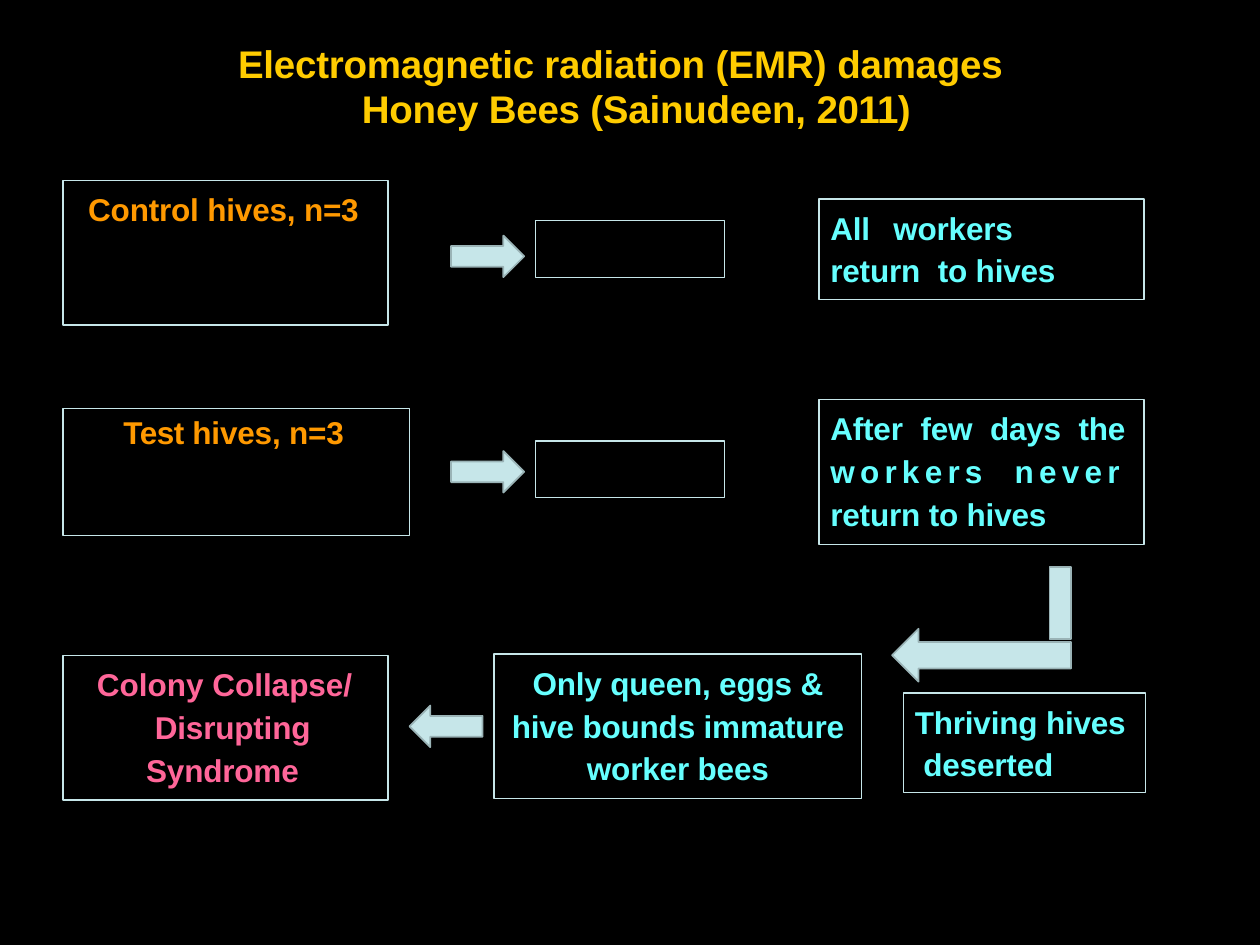
from lxml import etree
from pptx import Presentation
from pptx import util as u
from pptx.dml.color import RGBColor
from pptx.enum import shapes, text
from pptx.oxml.ns import qn

GOLD, ORANGE, CYAN, PINK = "FFCC00", "FF9900", "66FFFF", "FF6699"
PALE, GREY, BLACK = "C6E6E9", "9AB3B6", "000000"
SHAPE, ALIGN = shapes.MSO_SHAPE, text.PP_ALIGN


def rgb(value):
    """Return the colour for a hex string."""
    return RGBColor.from_string(value)


def add_shape(s, kind, at, fill=None, line=PALE, width=0.75):
    """Add a preset shape without a shadow."""
    sp = s.shapes.add_shape(kind, *map(u.Inches, at))
    sp.shadow.inherit = False
    if fill:
        sp.fill.solid()
        sp.fill.fore_color.rgb = rgb(fill)
    else:
        sp.fill.background()
    sp.line.color.rgb = rgb(line)
    sp.line.width = u.Pt(width)
    return sp


def add_arrow(s, kind, at):
    """Add a pale block arrow or arrow part."""
    return add_shape(s, kind, at, fill=PALE, line=GREY, width=1)


def write(sp, runs, color, size=18, top=0.04, right=0, left=0, hang=0,
          spacing=None, before=0, align=ALIGN.LEFT, tab=None):
    """Write one paragraph of (text, letter spacing) runs, with \\v as line break."""
    tf = sp.text_frame
    tf.word_wrap = True
    tf.vertical_anchor = text.MSO_ANCHOR.TOP
    tf.margin_left = tf.margin_bottom = 0
    tf.margin_top, tf.margin_right = u.Inches(top), u.Inches(right)
    p = tf.paragraphs[0]
    p.alignment, p.line_spacing, p.space_before = align, spacing, u.Pt(before)
    pPr = p._p.get_or_add_pPr()
    pPr.set("marL", str(u.Inches(left)))
    pPr.set("indent", str(u.Inches(hang)))
    if tab:
        tabs = etree.SubElement(pPr, qn("a:tabLst"))
        etree.SubElement(tabs, qn("a:tab"), pos=str(u.Inches(tab)), algn="l")
    for words, spc in runs:
        for i, part in enumerate(words.split("\v")):
            if i:
                p.add_line_break()
            r = p.add_run()
            r.text = part
            r.font.name, r.font.size, r.font.bold = "Arial", u.Pt(size), True
            r.font.color.rgb = rgb(color)
            r._r.get_or_add_rPr().set("spc", str(round(spc * 100)))


def add_box(s, at, runs, color, **fmt):
    """Add an outlined black box with text."""
    write(add_shape(s, SHAPE.RECTANGLE, at, fill=BLACK), runs, color, **fmt)


def main():
    """Build the slide."""
    prs = Presentation()
    prs.slide_width, prs.slide_height = u.Inches(10), u.Inches(7.5)
    s = prs.slides.add_slide(prs.slide_layouts[6])
    s.background.fill.solid()
    s.background.fill.fore_color.rgb = rgb(BLACK)

    title = s.shapes.add_textbox(*map(u.Inches, (1.88, 0.32, 6.5, 0.72)))
    write(title, [("Electromagnetic radiation ", -0.1), ("(EMR) ", 0),
                  ("damages\v Honey Bees (Sainudeen, ", -0.1), ("2011)", -0.3)],
          GOLD, size=22, top=0, left=0.91, hang=-0.9, spacing=u.Pt(26))

    add_box(s, (0.5, 1.43, 2.58, 1.15), [("Control hives, n=3", -0.1)], ORANGE,
            top=0.08, left=0.2, before=5.9)
    add_box(s, (0.5, 3.24, 2.75, 1.01), [("Test ", -0.3), ("hives, n=3", -0.1)],
            ORANGE, left=0.48, before=3.2)
    for arrow_top, box_top in ((1.87, 1.75), (3.58, 3.5)):
        add_arrow(s, SHAPE.RIGHT_ARROW, (3.58, arrow_top, 0.58, 0.33))
        add_shape(s, SHAPE.RECTANGLE, (4.25, box_top, 1.5, 0.45))

    short = dict(top=0.05, left=0.09, spacing=1.11, before=3.5)
    tall = dict(spacing=1.13, before=3)
    add_box(s, (6.5, 1.58, 2.58, 0.8),
            [("All\tworkers\vreturn", -0.1), (" ", 5), ("to hives", -0.1)],
            CYAN, tab=0.61, **short)
    add_box(s, (6.5, 3.17, 2.58, 1.15),
            [("After few days the ", -0.1), ("workers never ", 3),
             ("return to hives", -0.1)],
            CYAN, left=0.09, right=0.15, align=ALIGN.JUSTIFY, **tall)
    add_box(s, (7.17, 5.5, 1.92, 0.79), [("Thriving hives\v deserted", -0.1)],
            CYAN, **short)
    add_box(s, (3.92, 5.19, 2.92, 1.15),
            [("Only queen, eggs &\vhive bounds immature\vworker bees", -0.1)],
            CYAN, align=ALIGN.CENTER, **tall)
    add_box(s, (0.5, 5.2, 2.58, 1.15),
            [("Colony Collapse/\v ", 0), ("Disrupting\vSyndrome", -0.1)],
            PINK, left=0.66, hang=-0.39, **tall)

    add_arrow(s, SHAPE.RECTANGLE, (8.33, 4.5, 0.17, 0.57))
    add_arrow(s, SHAPE.LEFT_ARROW, (7.08, 4.99, 1.42, 0.42))
    add_arrow(s, SHAPE.LEFT_ARROW, (3.25, 5.6, 0.58, 0.33))
    prs.save("out.pptx")


if __name__ == "__main__":
    main()
